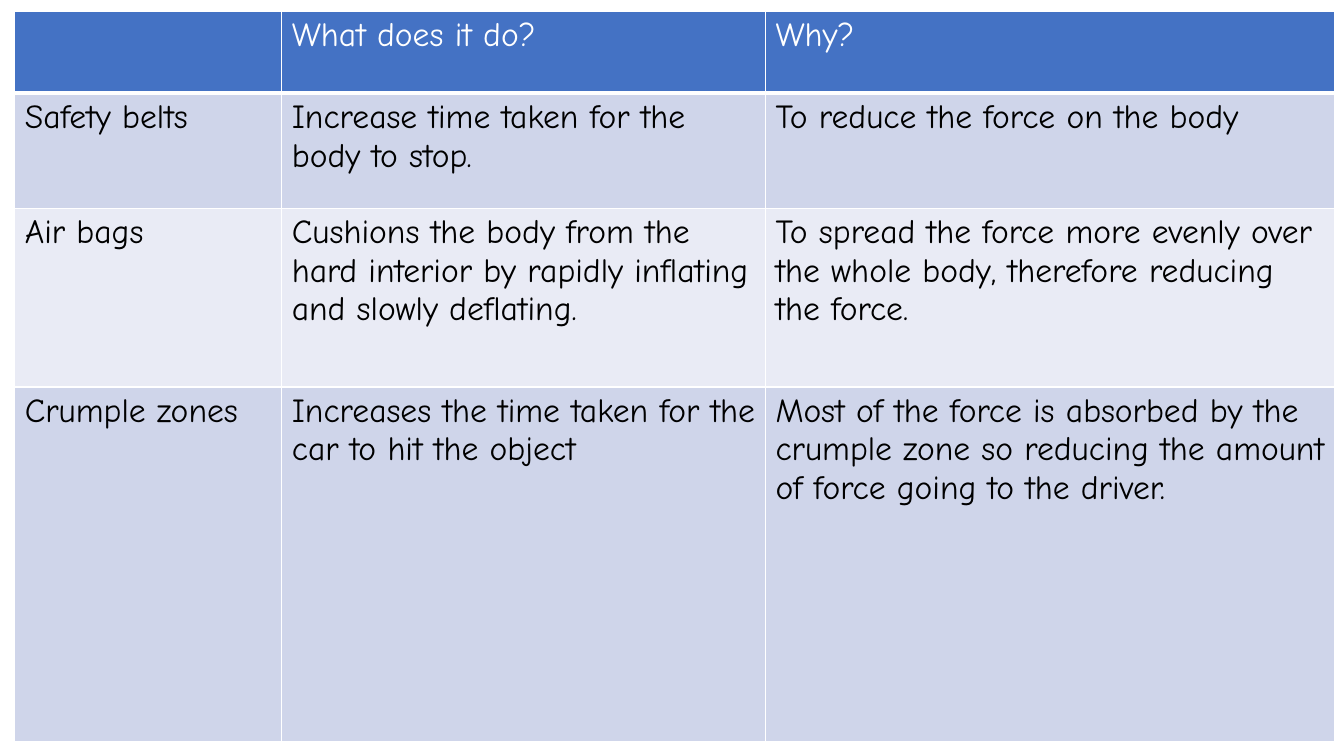
from lxml import etree
from pptx import Presentation
from pptx.dml.color import RGBColor
from pptx.oxml.ns import qn
from pptx.util import Cm, Pt

WHITE = RGBColor(0xFF, 0xFF, 0xFF)
BLACK = RGBColor(0x00, 0x00, 0x00)
BLUE = RGBColor(0x44, 0x72, 0xC4)
MID = RGBColor(0xCF, 0xD5, 0xEA)
PALE = RGBColor(0xE9, 0xEB, 0xF5)

FORMAT = {"name": "Comic Neue", "size": Pt(24), "bold": False}
WIDTHS = [6.73, 12.19, 14.35]
HEIGHTS = [2.06, 2.9, 4.5, 8.94]
ROWS = [
    ["", "What does it do?", "Why?"],
    ["Safety belts",
     "Increase time taken for the body to stop.",
     "To reduce the force on the body"],
    ["Air bags",
     "Cushions the body from the hard interior by rapidly inflating and slowly deflating.",
     "To spread the force more evenly over the whole body, therefore reducing the force."],
    ["Crumple zones",
     "Increases the time taken for the car to hit the object",
     "Most of the force is absorbed by the crumple zone so reducing the amount of force going to the driver."],
]


def border(cell, side, width):
    props = cell._tc.get_or_add_tcPr()
    line = etree.SubElement(props, qn(f"a:ln{side}"), w=str(Pt(width)))
    fill = etree.SubElement(line, qn("a:solidFill"))
    etree.SubElement(fill, qn("a:srgbClr"), val=str(WHITE))


deck = Presentation()
deck.slide_width = Cm(33.87)
deck.slide_height = Cm(19.05)
slide = deck.slides.add_slide(deck.slide_layouts[6])

frame = slide.shapes.add_table(len(ROWS), len(WIDTHS), Cm(0.37), Cm(0.29),
                               Cm(sum(WIDTHS)), Cm(sum(HEIGHTS)))
table = frame.table
for column, width in zip(table.columns, WIDTHS):
    column.width = Cm(width)
for row, height in zip(table.rows, HEIGHTS):
    row.height = Cm(height)

for r, texts in enumerate(ROWS):
    head = r == 0
    shade = BLUE if head else MID if r % 2 else PALE
    for c, text in enumerate(texts):
        cell = table.cell(r, c)
        for side in "LRTB":
            thick = head and side == "B" or r == 1 and side == "T"
            border(cell, side, 3 if thick else 1)
        cell.fill.solid()
        cell.fill.fore_color.rgb = shade
        cell.text = text
        font = cell.text_frame.paragraphs[0].font
        if text:
            font = cell.text_frame.paragraphs[0].runs[0].font
        for key, value in FORMAT.items():
            setattr(font, key, value)
        font.color.rgb = WHITE if head else BLACK

deck.save("out.pptx")
